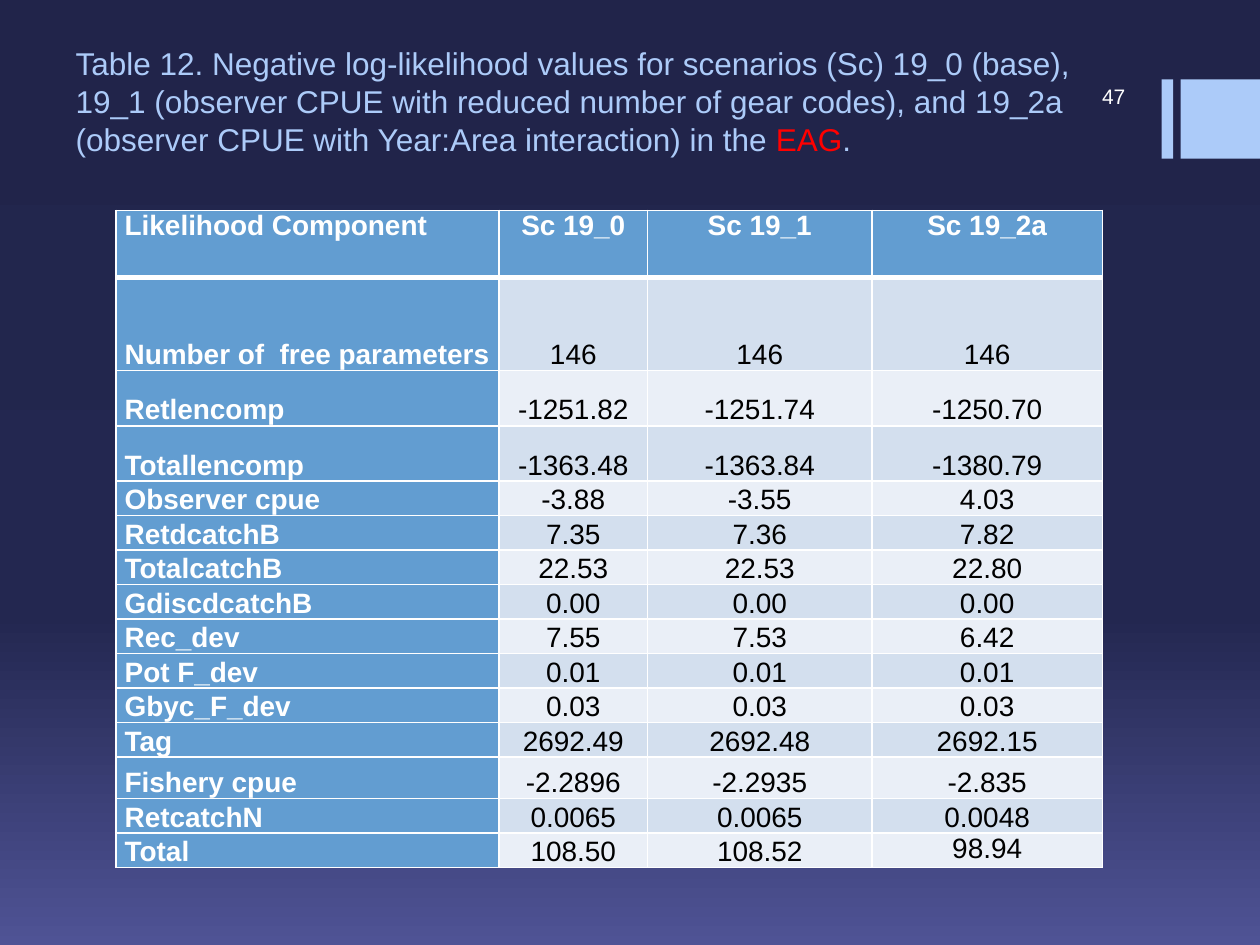
from copy import deepcopy

from lxml import etree
from pptx import Presentation
from pptx.dml.color import RGBColor
from pptx.enum import shapes, text
from pptx.oxml.ns import qn
from pptx.util import Inches, Pt

FONT = "Arial"
WHITE = RGBColor(0xFF, 0xFF, 0xFF)
BLACK = RGBColor(0, 0, 0)
RED = RGBColor(0xFF, 0, 0)
PALE_BLUE = RGBColor(0xAC, 0xCB, 0xF9)
HEADER_BLUE = RGBColor(0x62, 0x9D, 0xD1)
BANDS = [RGBColor(0xEA, 0xEF, 0xF7), RGBColor(0xD3, 0xDF, 0xEE)]
BACKDROP = [
    (0, RGBColor(0x21, 0x24, 0x4A)),
    (0.65, RGBColor(0x23, 0x27, 0x50)),
    (1, RGBColor(0x4F, 0x53, 0x95)),
]

TITLE = [
    ("Table 12. Negative log-likelihood values for scenarios (Sc) 19_0 (base), "
     "19_1 (observer CPUE with reduced number of gear codes), and 19_2a "
     "(observer CPUE with Year:Area interaction) in the ", PALE_BLUE),
    ("EAG", RED),
    (".", PALE_BLUE),
]
PAGE_NUMBER = "47"
LIKELIHOODS = [
    ("Likelihood Component", "Sc 19_0", "Sc 19_1", "Sc 19_2a"),
    ("Number of  free parameters", "146", "146", "146"),
    ("Retlencomp", "-1251.82", "-1251.74", "-1250.70"),
    ("Totallencomp", "-1363.48", "-1363.84", "-1380.79"),
    ("Observer cpue", "-3.88", "-3.55", "4.03"),
    ("RetdcatchB", "7.35", "7.36", "7.82"),
    ("TotalcatchB", "22.53", "22.53", "22.80"),
    ("GdiscdcatchB", "0.00", "0.00", "0.00"),
    ("Rec_dev", "7.55", "7.53", "6.42"),
    ("Pot F_dev", "0.01", "0.01", "0.01"),
    ("Gbyc_F_dev", "0.03", "0.03", "0.03"),
    ("Tag", "2692.49", "2692.48", "2692.15"),
    ("Fishery cpue", "-2.2896", "-2.2935", "-2.835"),
    ("RetcatchN", "0.0065", "0.0065", "0.0048"),
    ("Total", "108.50", "108.52", "98.94"),
]
COLUMN_WIDTHS = [3.04, 1.18, 1.78, 1.83]
ROW_HEIGHT = 0.274
TALL_ROWS = {0: 0.53, 1: 0.74, 2: 0.44, 3: 0.44, 12: 0.33}
ACCENT_BARS = [(9.22, 0.09), (9.37, 0.63)]


def add_run(paragraph, words, size, color, bold=False):
    run = paragraph.add_run()
    run.text = words
    run.font.name = FONT
    run.font.size = Pt(size)
    run.font.bold = bold
    run.font.color.rgb = color


def paint_backdrop(slide):
    fill = slide.background.fill
    fill.gradient()
    fill.gradient_angle = 270
    stop_list = slide._element.find(".//" + qn("a:gsLst"))
    stop_list.append(deepcopy(stop_list[-1]))
    for stop, (position, color) in zip(fill.gradient_stops, BACKDROP):
        stop.position = position
        stop.color.rgb = color


def set_borders(cell, widths):
    """Draw white borders; widths maps L, R, T and B to points."""
    properties = cell._tc.get_or_add_tcPr()
    for index, side in enumerate("LRTB"):
        line = etree.Element(qn(f"a:ln{side}"), w=str(Pt(widths[side])))
        solid = etree.SubElement(line, qn("a:solidFill"))
        etree.SubElement(solid, qn("a:srgbClr"), val=str(WHITE))
        properties.insert(index, line)


def fill_cell(cell, words, row, column):
    is_header = row == 0
    is_label = is_header or column == 0
    is_last = (row, column) == (len(LIKELIHOODS) - 1, len(COLUMN_WIDTHS) - 1)
    cell.margin_left = cell.margin_right = Inches(0.07)
    cell.margin_top = cell.margin_bottom = 0
    cell.vertical_anchor = (text.MSO_ANCHOR.TOP if is_header or is_last
                            else text.MSO_ANCHOR.BOTTOM)
    cell.fill.solid()
    cell.fill.fore_color.rgb = HEADER_BLUE if is_label else BANDS[row % 2]
    paragraph = cell.text_frame.paragraphs[0]
    paragraph.alignment = text.PP_ALIGN.CENTER if column else text.PP_ALIGN.LEFT
    if is_header:
        paragraph.space_after = Pt(10)
    add_run(paragraph, words, 16, WHITE if is_label else BLACK, is_label)
    set_borders(cell, {"L": 1, "R": 1, "T": 3 if row == 1 else 1,
                       "B": 3 if is_header else 1})


def add_likelihood_table(slide):
    heights = [TALL_ROWS.get(row, ROW_HEIGHT) for row in range(len(LIKELIHOODS))]
    table = slide.shapes.add_table(
        len(heights), len(COLUMN_WIDTHS), Inches(0.92), Inches(1.67),
        Inches(sum(COLUMN_WIDTHS)), Inches(sum(heights))).table
    for column, width in zip(table.columns, COLUMN_WIDTHS):
        column.width = Inches(width)
    for row, (height, values) in enumerate(zip(heights, LIKELIHOODS)):
        table.rows[row].height = Inches(height)
        for column, words in enumerate(values):
            fill_cell(table.cell(row, column), words, row, column)


def main():
    deck = Presentation()
    deck.slide_width, deck.slide_height = Inches(10), Inches(7.5)
    slide = deck.slides.add_slide(deck.slide_layouts[5])
    paint_backdrop(slide)

    for left, width in ACCENT_BARS:
        bar = slide.shapes.add_shape(
            shapes.MSO_SHAPE.RECTANGLE, Inches(left), Inches(0.63),
            Inches(width), Inches(0.63))
        bar.shadow.inherit = False
        bar.fill.solid()
        bar.fill.fore_color.rgb = PALE_BLUE
        bar.line.fill.background()

    title = slide.shapes.title
    title.left, title.top = Inches(0.5), Inches(0.04)
    title.width, title.height = Inches(8.58), Inches(1.26)
    title.text_frame.word_wrap = True
    title.text_frame.auto_size = text.MSO_AUTO_SIZE.NONE
    title.text_frame.vertical_anchor = text.MSO_ANCHOR.BOTTOM
    heading = title.text_frame.paragraphs[0]
    heading.alignment = text.PP_ALIGN.LEFT
    for words, color in TITLE:
        add_run(heading, words, 18, color)

    page = slide.shapes.add_textbox(
        Inches(8), Inches(0.6), Inches(1.03), Inches(0.33)).text_frame
    page.word_wrap = True
    page.vertical_anchor = text.MSO_ANCHOR.MIDDLE
    page.paragraphs[0].alignment = text.PP_ALIGN.RIGHT
    add_run(page.paragraphs[0], PAGE_NUMBER, 12, WHITE)

    add_likelihood_table(slide)
    deck.save("out.pptx")


if __name__ == "__main__":
    main()
